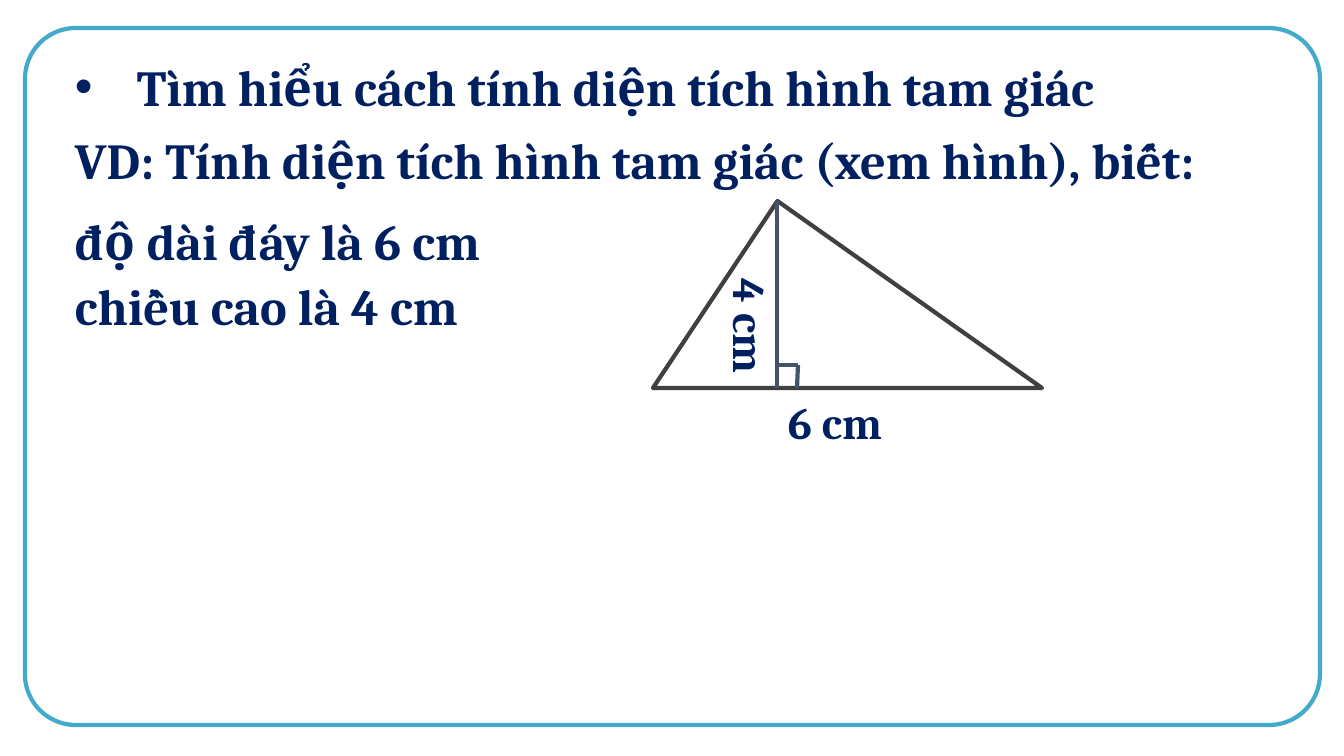
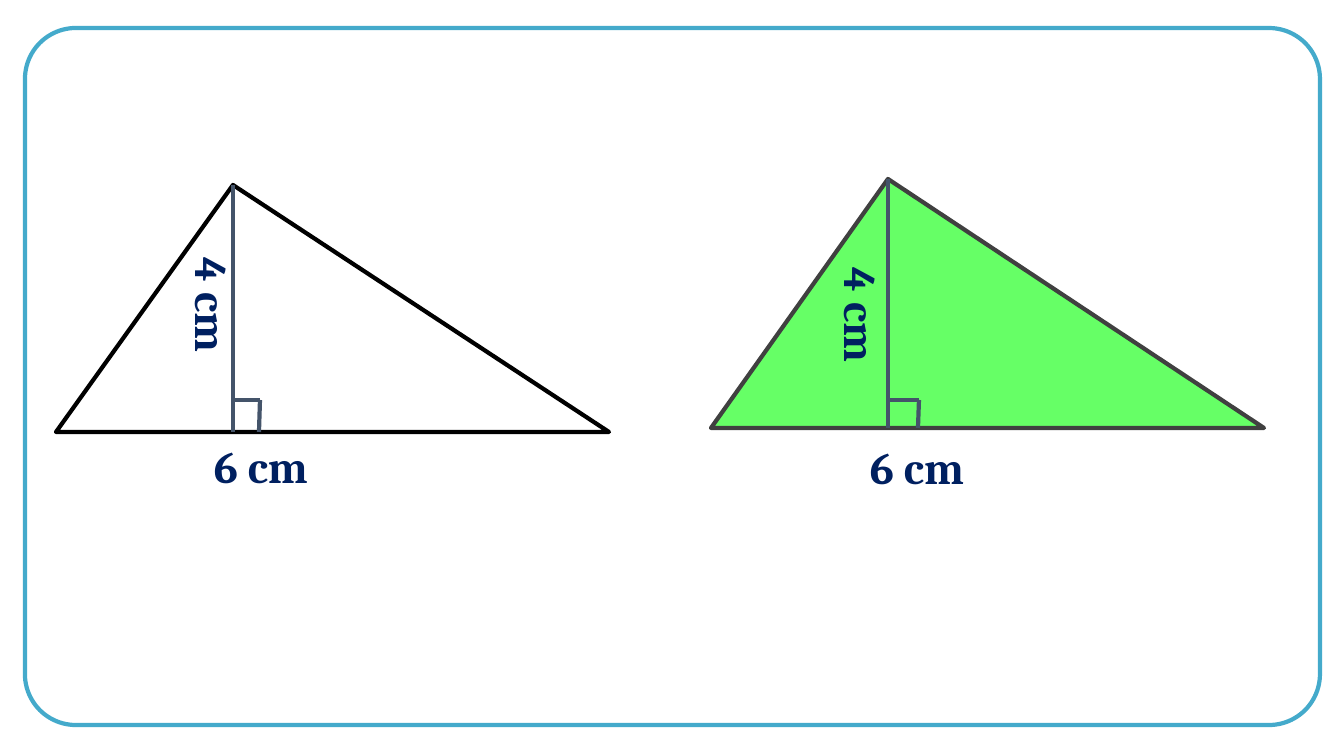
import pptx
import pptx.util
import pptx.dml.color
import pptx.enum.shapes
import pptx.enum.text
import pptx.oxml.ns
import lxml.etree

PX = 914400 / 100.8
COLORS = {
    "frame": "44AACB", "text": "002060", "mark": "44546A", "white": "FFFFFF",
    "green": "66FF66", "grey": "404040", "black": "000000",
}
FONT = "Cambria"
SHAPE = pptx.enum.shapes.MSO_SHAPE
ADJUST = 0.32  # place of the apex along the base


def emu(*sizes):
    return [pptx.util.Emu(round(size * PX)) for size in sizes]


def color(name):
    return pptx.dml.color.RGBColor.from_string(COLORS[name])


def stroke(item, name):
    item.line.color.rgb = color(name)
    item.line.width = pptx.util.Pt(3)


def shape(parts, kind, box, fill, line, adjust):
    item = parts.add_shape(kind, *emu(*box))
    item.shadow.inherit = False
    item.adjustments[0] = adjust
    if fill:
        item.fill.solid()
        item.fill.fore_color.rgb = color(fill)
    else:
        item.fill.background()
    stroke(item, line)


def line(parts, start, end):
    item = parts.add_connector(pptx.enum.shapes.MSO_CONNECTOR.STRAIGHT,
                               *emu(*start, *end))
    stroke(item, "mark")
    props = item._element.spPr
    lxml.etree.SubElement(props, pptx.oxml.ns.qn("a:effectLst"))


def bullet(para, indent):
    props = para._p.get_or_add_pPr()
    props.set("marL", str(emu(indent)[0]))
    props.set("indent", str(-emu(indent)[0]))
    font = lxml.etree.SubElement(props, pptx.oxml.ns.qn("a:buFont"))
    font.set("typeface", "Arial")
    char = lxml.etree.SubElement(props, pptx.oxml.ns.qn("a:buChar"))
    char.set("char", "•")


def text(parts, box, lines, size, turn=0, indent=0):
    item = parts.add_textbox(*emu(*box))
    item.rotation = turn
    frame = item.text_frame
    frame.word_wrap = True
    frame.auto_size = pptx.enum.text.MSO_AUTO_SIZE.SHAPE_TO_FIT_TEXT
    frame.margin_top = emu(9)[0]
    for num, words in enumerate(lines):
        para = frame.add_paragraph() if num else frame.paragraphs[0]
        if indent:
            bullet(para, indent)
        para.alignment = pptx.enum.text.PP_ALIGN.JUSTIFY
        if num:
            para.space_before = pptx.util.Pt(3)
        run = para.add_run()
        run.text = words
        run.font.name = FONT
        run.font.size = pptx.util.Pt(size)
        run.font.bold = True
        run.font.color.rgb = color("text")


def figure(parts, box, fill, edge, mark, base, side, label):
    """Triangle with its height; base and side are label offsets."""
    left, top, wide, high = box
    shape(parts, SHAPE.ISOSCELES_TRIANGLE, box, fill, edge, ADJUST)
    # Height and right angle
    foot, floor = left + round(ADJUST * wide), top + high
    right, roof = foot + mark[0], floor - mark[1]
    line(parts, (foot, top), (foot, floor))
    line(parts, (right, roof), (foot, roof))
    line(parts, (right, roof), (right - 1, floor))
    # Lengths
    for words, spot, turn in (("4 cm", side, 90), ("6 cm", base, 0)):
        text(parts, (left + spot[0], top + spot[1], *label), [words], 32, turn)


def page(deck):
    slide = deck.slides.add_slide(deck.slide_layouts[6])
    shape(slide.shapes, SHAPE.ROUNDED_RECTANGLE, (25, 28, 1295, 697),
          None, "frame", 0.073)
    return slide.shapes


def task(deck):
    parts = page(deck)
    left = 65
    text(parts, (left, 47, 1060, 72),
         ["Tìm hiểu cách tính diện tích hình tam giác"], 36, indent=62)
    figure(parts, (653, 201, 389, 187), "white", "grey",
           (21, 23), (125, 185), (33, 104), (138, 65))
    text(parts, (left, 120, 1178, 72),
         ["VD: Tính diện tích hình tam giác (xem hình), biết:"], 36)
    text(parts, (left, 201, 451, 136),
         ["độ dài đáy là 6 cm", "chiều cao là 4 cm"], 36)


def pair(deck):
    parts = page(deck)
    label = (197, 85)
    plans = (
        ((56, 185, 553, 247), "white", "black", (27, 32), (148, 245), (52, 119)),
        ((711, 179, 553, 249), "green", "grey", (31, 28), (149, 252), (46, 135)),
    )
    for plan in plans:
        # Side labels turn about their middle
        figure(parts.add_group_shape().shapes, *plan, label)


def main():
    deck = pptx.Presentation()
    deck.slide_width, deck.slide_height = emu(1344, 756)
    task(deck)
    pair(deck)
    deck.save("out.pptx")


if __name__ == "__main__":
    main()
